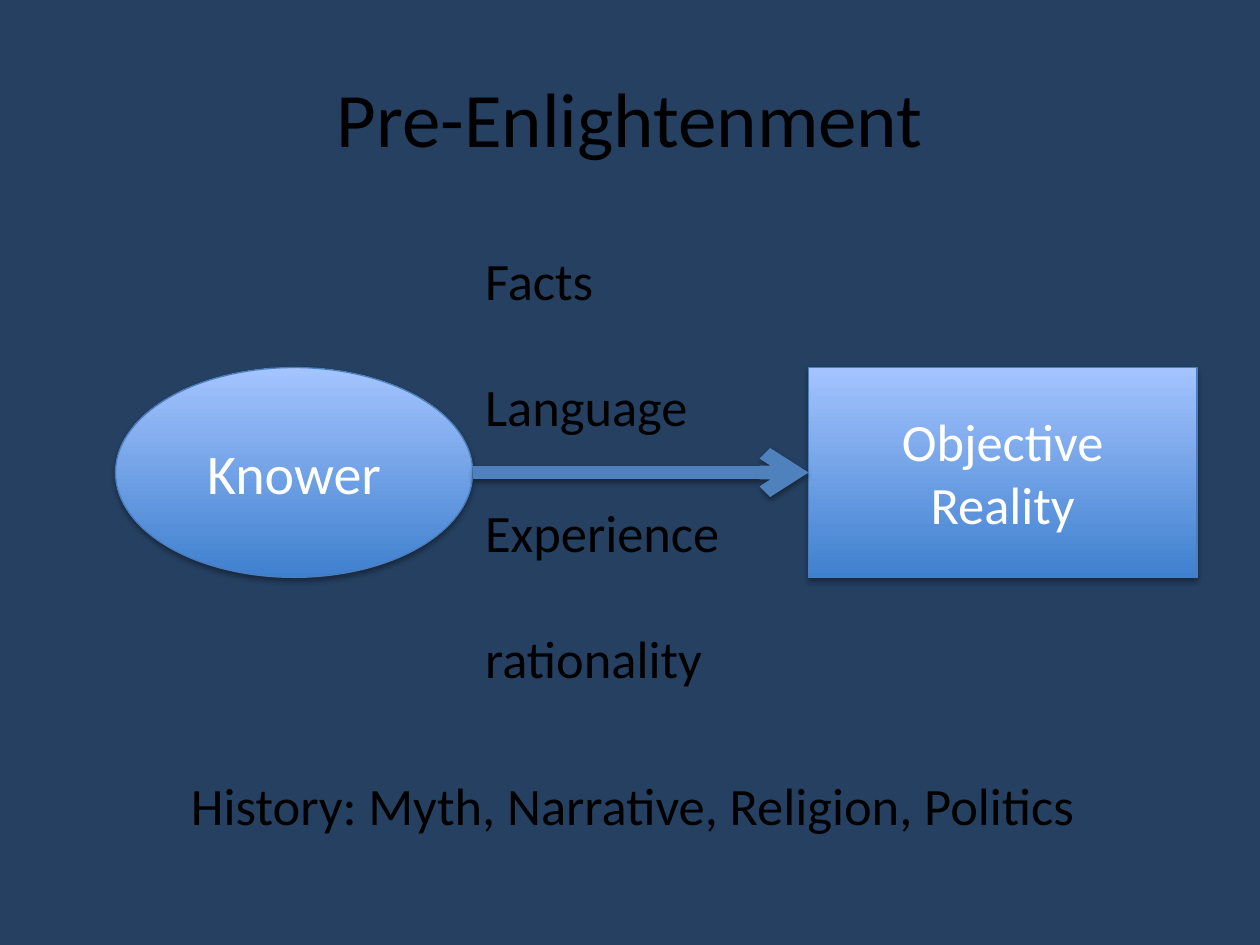
from lxml import etree
from pptx import Presentation
from pptx.dml.color import RGBColor
from pptx.enum import shapes, text
from pptx.oxml import ns
from pptx.util import Cm, Pt

TITLE = "Pre-Enlightenment"
MEDIATORS = ["Facts", "Language", "Experience", "rationality"]
HISTORY = ["History: Myth, Narrative, Religion, Politics"]
# preset shape, lines of text, size, left, width
NODES = [
    (shapes.MSO_SHAPE.OVAL, ["Knower"], 32, 2.33, 7.2),
    (shapes.MSO_SHAPE.RECTANGLE, ["Objective", "Reality"], 30, 16.3, 7.83),
]
NODE_TOP, NODE_HEIGHT = 7.41, 4.23
GRADIENT = ("3F80CE", "A4C4FF")


def rgb(value):
    return RGBColor.from_string(value)


def write(tf, lines, size=30, color="000000", align=text.PP_ALIGN.LEFT,
          anchor=text.MSO_ANCHOR.TOP, gap=0):
    tf.word_wrap = True
    tf.vertical_anchor = anchor
    for i, line in enumerate(lines):
        p = tf.add_paragraph() if i else tf.paragraphs[0]
        p.alignment = align
        p.space_before = Pt(gap if i else 0)
        r = p.add_run()
        r.text = line
        r.font.name, r.font.size = "Calibri", Pt(size)
        r.font.color.rgb = rgb(color)


def add_shadow(sp, opacity, distance):
    """Give the shape a soft black shadow that falls straight down."""
    effects = etree.SubElement(sp._element.spPr, ns.qn("a:effectLst"))
    shadow = etree.SubElement(
        effects, ns.qn("a:outerShdw"), blurRad=str(Pt(3.1)), dist=str(Pt(distance)),
        dir="5400000", rotWithShape="0")
    color = etree.SubElement(shadow, ns.qn("a:srgbClr"), val="000000")
    etree.SubElement(color, ns.qn("a:alpha"), val=str(opacity * 1000))


def add_node(s, preset, lines, size, left, width):
    sp = s.shapes.add_shape(preset, Cm(left), Cm(NODE_TOP), Cm(width), Cm(NODE_HEIGHT))
    sp.fill.gradient()
    sp.fill.gradient_angle = 90
    for stop, color in zip(sp.fill.gradient_stops, GRADIENT):
        stop.color.rgb = rgb(color)
    sp.line.color.rgb = rgb("4B7EBC")
    sp.line.width = Pt(0.75)
    add_shadow(sp, 35, 1.8)
    write(sp.text_frame, lines, size, "FFFFFF", text.PP_ALIGN.CENTER,
          text.MSO_ANCHOR.MIDDLE)
    return sp


def add_arrow(s, start, end):
    """Draw a thick arrow from the right of one node to the left of the next."""
    y = start.top + start.height // 2
    arrow = s.shapes.add_connector(
        shapes.MSO_CONNECTOR.STRAIGHT, start.left + start.width, y, end.left, y)
    arrow.end_connect(end, 1)
    arrow.line.color.rgb = rgb("4F81BD")
    arrow.line.width = Pt(8)
    etree.SubElement(arrow.line._get_or_add_ln(), ns.qn("a:tailEnd"), type="arrow")
    add_shadow(arrow, 38, 1.6)


def add_text(s, lines, left, top, width, height, **fmt):
    box = s.shapes.add_textbox(Cm(left), Cm(top), Cm(width), Cm(height))
    write(box.text_frame, lines, **fmt)


def main():
    prs = Presentation()
    prs.slide_width, prs.slide_height = Cm(25.4), Cm(19.05)
    s = prs.slides.add_slide(prs.slide_layouts[5])
    s.background.fill.solid()
    s.background.fill.fore_color.rgb = rgb("254061")

    title = s.shapes.title
    title.left, title.top, title.width, title.height = Cm(1.27), Cm(0.76), Cm(22.86), Cm(3.18)
    write(title.text_frame, [TITLE], size=44, align=text.PP_ALIGN.CENTER,
          anchor=text.MSO_ANCHOR.MIDDLE)

    knower, reality = [add_node(s, *node) for node in NODES]
    add_arrow(s, knower, reality)
    add_text(s, MEDIATORS, 9.53, 4.88, 5.72, 9.25, gap=36)
    add_text(s, HISTORY, 3.6, 15.45, 19.48, 1.55)
    prs.save("out.pptx")


if __name__ == "__main__":
    main()
